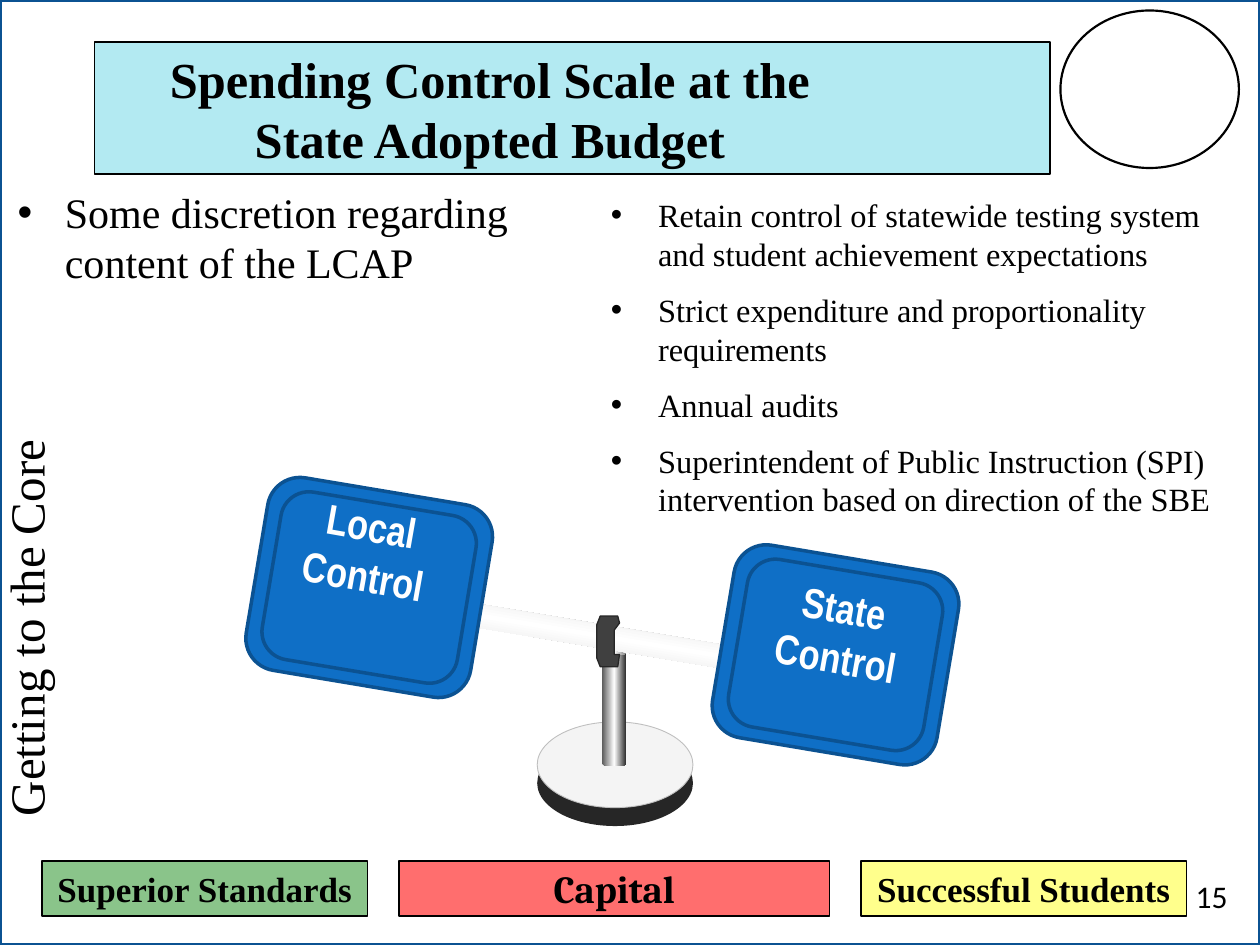
import copy
import pptx
import pptx.util
import pptx.dml.color
import pptx.enum.shapes
import pptx.enum.text
import pptx.oxml.ns
import lxml.etree

Pt = pptx.util.Pt
qn = pptx.oxml.ns.qn
SHAPE = pptx.enum.shapes.MSO_SHAPE
ALIGN = pptx.enum.text.PP_ALIGN
ANCHOR = pptx.enum.text.MSO_ANCHOR

SERIF = "Times New Roman"
BLUE, NAVY = "0F6FC6", "0B5292"
SIDE_TITLE = "Getting to the Core"
TITLE_LINES = ["Spending Control Scale at the", "State Adopted Budget"]
LOCAL_POINTS = ["Some discretion regarding content of the LCAP"]
STATE_POINTS = [
    "Retain control of statewide testing system and student achievement expectations",
    "Strict expenditure and proportionality requirements",
    "Annual audits",
    "Superintendent of Public Instruction (SPI) intervention based on direction of the SBE",
]
BANNERS = [
    ("Superior Standards", 24, 186, "008000", 46),
    ("", 228, 246, "FF0000", 57),
    ("Successful Students", 492, 186, "FFFF05", 46),
]
WEIGHTS = [
    ("Local Control", 146, 280, (164, 282)),
    ("State Control", 412.5, 318.5, (434, 329)),
]
WEIGHT_SIZE, INNER_SIZE = (130, 111.5), (113, 97)
COLLAR = [(343, 352), (353, 352), (353.5, 356), (351, 360), (351, 374),
          (353.5, 374), (353, 381), (343, 381), (341, 376), (341, 357)]

presentation = pptx.Presentation()
presentation.slide_width, presentation.slide_height = Pt(720), Pt(540)
slide = presentation.slides.add_slide(presentation.slide_layouts[6])


def color(value):
    return pptx.dml.color.RGBColor.from_string(value)


def add_box(kind, left, top, width, height, fill, line=None, weight=0.75, rotation=0, alpha=None):
    shape = slide.shapes.add_shape(kind, Pt(left), Pt(top), Pt(width), Pt(height))
    shape.rotation = rotation
    paint(shape, fill, line, weight)
    if alpha:
        solid = shape.fill._xPr.find(qn("a:solidFill"))
        lxml.etree.SubElement(solid[0], qn("a:alpha"), val=str(alpha * 1000))
    return shape


def paint(shape, fill, line=None, weight=0.75):
    shape.shadow.inherit = False
    if isinstance(fill, str):
        shape.fill.solid()
        shape.fill.fore_color.rgb = color(fill)
    else:
        shape.fill.gradient()
        shape.fill.gradient_angle = 0
        stop_list = shape.fill._xPr.find(qn("a:gradFill")).find(qn("a:gsLst"))
        stop_list.append(copy.deepcopy(stop_list[-1]))
        for index, (stop, value) in enumerate(zip(shape.fill.gradient_stops, fill)):
            stop.position = index / 2
            stop.color.rgb = color(value)
    if line:
        shape.line.color.rgb = color(line)
        shape.line.width = Pt(weight)
    else:
        shape.line.fill.background()


def add_bullet(paragraph):
    properties = paragraph._p.get_or_add_pPr()
    properties.set("marL", str(Pt(27)))
    properties.set("indent", str(-Pt(27)))
    lxml.etree.SubElement(properties, qn("a:buFont"), typeface="Arial")
    lxml.etree.SubElement(properties, qn("a:buChar"), char="•")


def write(shape, lines, size=20, font=SERIF, fill="000000", bold=False, align=ALIGN.LEFT,
          anchor=ANCHOR.TOP, bullets=False, before=0, after=0):
    frame = shape.text_frame
    frame.word_wrap = True
    frame.vertical_anchor = anchor
    for index, line in enumerate(lines):
        paragraph = frame.paragraphs[0] if index == 0 else frame.add_paragraph()
        paragraph.alignment = align
        paragraph.space_after = Pt(after)
        if index:
            paragraph.space_before = Pt(before)
        if bullets:
            add_bullet(paragraph)
        run = paragraph.add_run()
        run.text = line
        run.font.name, run.font.size, run.font.bold = font, Pt(size), bold
        run.font.color.rgb = color(fill)


def add_text(lines, left, top, width, height, rotation=0, **style):
    box = slide.shapes.add_textbox(Pt(left), Pt(top), Pt(width), Pt(height))
    box.rotation = rotation
    write(box, lines, **style)


add_box(SHAPE.RECTANGLE, 0, 0, 720, 540, "FFFFFF", NAVY, 2)
add_text([SIDE_TITLE], -91.5, 313, 246, 75, rotation=270, size=28)
add_box(SHAPE.OVAL, 606, 6, 102, 90, "FFFFFF", "000000", 1.25)

for label, left, width, fill, alpha in BANNERS:
    banner = add_box(SHAPE.RECTANGLE, left, 492, width, 31.5, fill, "000000", alpha=alpha)
    if label:
        write(banner, [label], bold=True, align=ALIGN.CENTER)

title = add_box(SHAPE.RECTANGLE, 54, 24, 546, 75.5, "B3EAF2", "000000")
write(title, TITLE_LINES, size=28.8, bold=True, align=ALIGN.CENTER, anchor=ANCHOR.MIDDLE)
title.text_frame.paragraphs[0]._p.get_or_add_pPr().set("marR", str(Pt(94)))

add_text(LOCAL_POINTS, 3, 103, 330, 407, size=24, bullets=True)
add_text(STATE_POINTS, 342, 108, 368, 230, size=18.5, bullets=True, before=3.7, after=6)

add_box(SHAPE.OVAL, 307, 423, 89, 49, "262626")
add_box(SHAPE.OVAL, 307, 412.5, 89, 49, "F4F4F4", "BFBFBF", 0.5)
add_box(SHAPE.CAN, 344, 371, 14, 67, ["595959", "FFFFFF", "262626"])
add_box(SHAPE.CAN, 346.5, 201.5, 13.5, 327.5, ["B0B0B0", "FFFFFF", "A6A6A6"], rotation=99.5)

for label, left, top, _ in WEIGHTS:
    width, height = WEIGHT_SIZE
    add_box(SHAPE.ROUNDED_RECTANGLE, left, top, width, height, BLUE, NAVY, 2, 9.5)
    inner_width, inner_height = INNER_SIZE
    add_box(SHAPE.ROUNDED_RECTANGLE, left + (width - inner_width) / 2,
            top + (height - inner_height) / 2, inner_width, inner_height, BLUE, NAVY, 2, 9.5)

builder = slide.shapes.build_freeform(*COLLAR[0], scale=Pt(1))
builder.add_line_segments(COLLAR[1:], close=True)
paint(builder.convert_to_shape(), "404040", "262626")

for label, _, _, (left, top) in WEIGHTS:
    add_text([label], left, top, 93.5, 56, rotation=10, size=24, font="Arial Narrow",
             fill="FFFFFF", bold=True, align=ALIGN.CENTER)

add_text(["Capital"], 246, 490.5, 210, 34, size=22, font="Cambria", bold=True, align=ALIGN.CENTER)
add_text(["15"], 560, 497.5, 148.5, 26.5, size=18, font="Calibri", align=ALIGN.RIGHT)

presentation.save("out.pptx")
